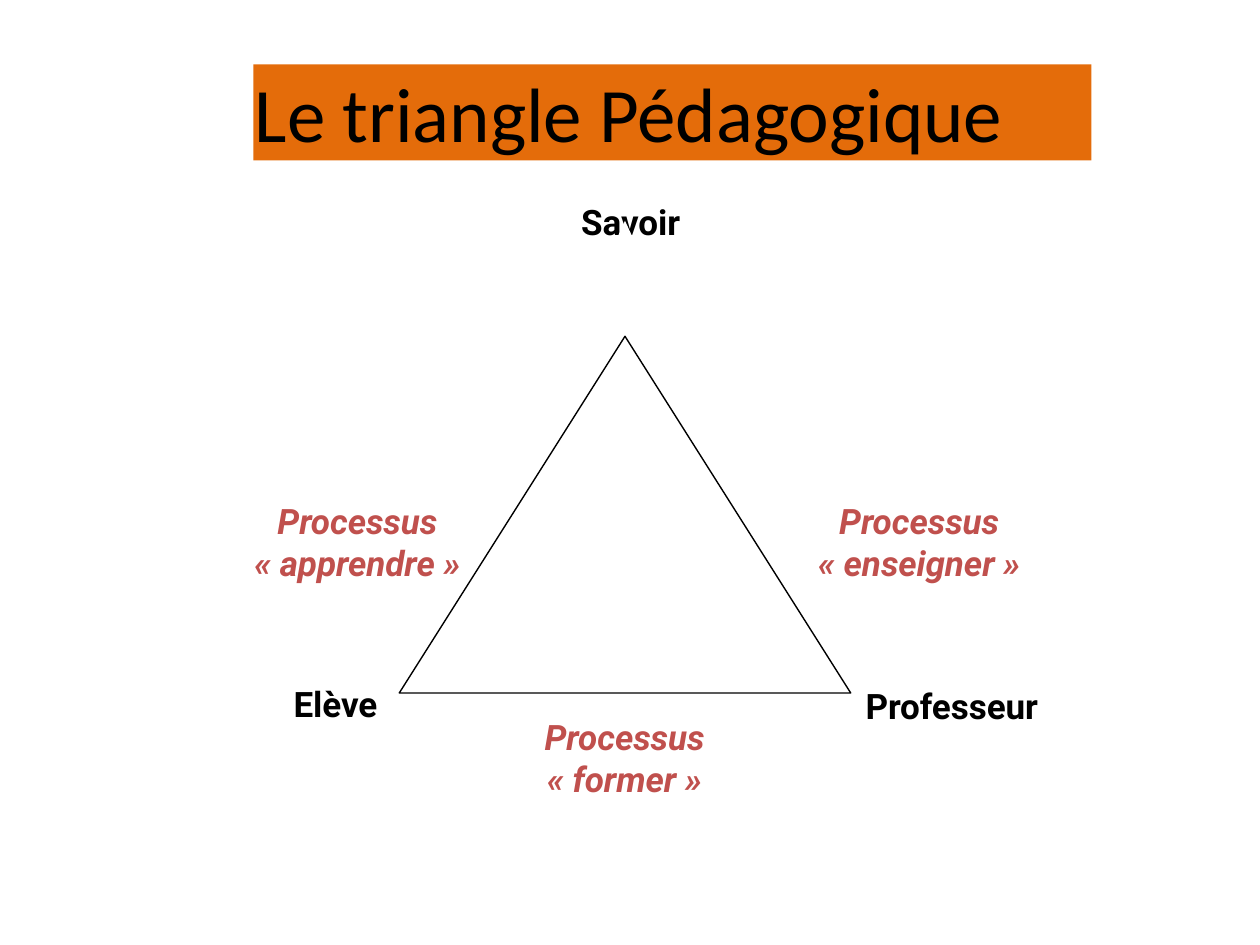
from pptx import Presentation
from pptx import util as u
from pptx.dml.color import RGBColor
from pptx.enum import text as t

ORANGE = RGBColor(0xE4, 0x6C, 0x0A)
RED = RGBColor(0xC0, 0x50, 0x4D)
BLACK = RGBColor(0, 0, 0)
WHITE = RGBColor(255, 255, 255)

LEFT, CENTER = t.PP_ALIGN.LEFT, t.PP_ALIGN.CENTER


def place(shape, left, top, width, height):
    shape.left, shape.top = u.Cm(left), u.Cm(top)
    shape.width, shape.height = u.Cm(width), u.Cm(height)


def write(shape, content, *, size=20, font="Roboto", color=BLACK, bold=True,
          italic=False, align=LEFT, indents=(0.03, 0.08)):
    """Write one paragraph per line of content, with tight margins."""
    frame = shape.text_frame
    frame.text = content
    frame.word_wrap = True
    frame.auto_size = t.MSO_AUTO_SIZE.SHAPE_TO_FIT_TEXT
    frame.vertical_anchor = t.MSO_ANCHOR.TOP
    frame.margin_left = frame.margin_right = frame.margin_bottom = 0
    frame.margin_top = u.Cm(0.03)
    for paragraph, indent in zip(frame.paragraphs, indents):
        paragraph.alignment = align
        if align == LEFT:
            paragraph._p.get_or_add_pPr().set("marL", str(u.Cm(indent)))
        for run in paragraph.runs:
            run.font.size, run.font.name = u.Pt(size), font
            run.font.bold, run.font.italic = bold, italic
            run.font.color.rgb = color
            run._r.get_or_add_rPr().set("spc", "-5")
    frame.paragraphs[0].space_before = u.Pt(1)


def add_label(slide, content, box, **style):
    label = slide.shapes.add_textbox(0, 0, 0, 0)
    place(label, *box)
    write(label, content, **style)


def add_triangle(slide, apex_y, base_y, fill=None, line=None):
    left, apex, right = u.Cm(8.05), u.Cm(12.6), u.Cm(17.15)
    top, base = u.Cm(apex_y), u.Cm(base_y)
    builder = slide.shapes.build_freeform(left, base)
    builder.add_line_segments([(apex, top), (right, base)], close=True)
    triangle = builder.convert_to_shape()
    triangle.shadow.inherit = False
    if fill is None:
        triangle.fill.background()
    else:
        triangle.fill.solid()
        triangle.fill.fore_color.rgb = fill
    if line is None:
        triangle.line.fill.background()
    else:
        triangle.line.color.rgb = line
        triangle.line.width = u.Pt(0.8)


def main():
    prs = Presentation()
    prs.slide_width, prs.slide_height = u.Cm(25.4), u.Cm(19.05)
    slide = prs.slides.add_slide(prs.slide_layouts[5])

    # Title band
    title = slide.shapes.title
    place(title, 5.11, 1.3, 16.89, 1.93)
    title.fill.solid()
    title.fill.fore_color.rgb = ORANGE
    write(title, "Le triangle Pédagogique", size=44, font="Calibri", bold=False)

    # Processes along the sides
    processes = [
        ("former", (10.95, 14.4, 3.86, 1.75), LEFT),
        ("enseigner", (15.67, 10.03, 5.72, 1.75), CENTER),
        ("apprendre", (4.88, 10.03, 4.65, 1.75), CENTER),
    ]
    for process, box, align in processes:
        add_label(slide, f"Processus\n« {process} »", box,
                  color=RED, italic=True, align=align)

    # Poles at the corners
    add_label(slide, "Professeur", (17.42, 13.77, 3.96, 0.9))
    add_label(slide, "Elève", (5.89, 13.72, 1.91, 0.9))
    add_label(slide, "Savoir", (11.43, 4.01, 2.57, 0.9), align=CENTER)

    # White backing, then the outlined triangle
    add_triangle(slide, 4.45, 14.4, fill=WHITE)
    add_triangle(slide, 6.78, 13.97, line=BLACK)

    prs.save("out.pptx")


if __name__ == "__main__":
    main()
